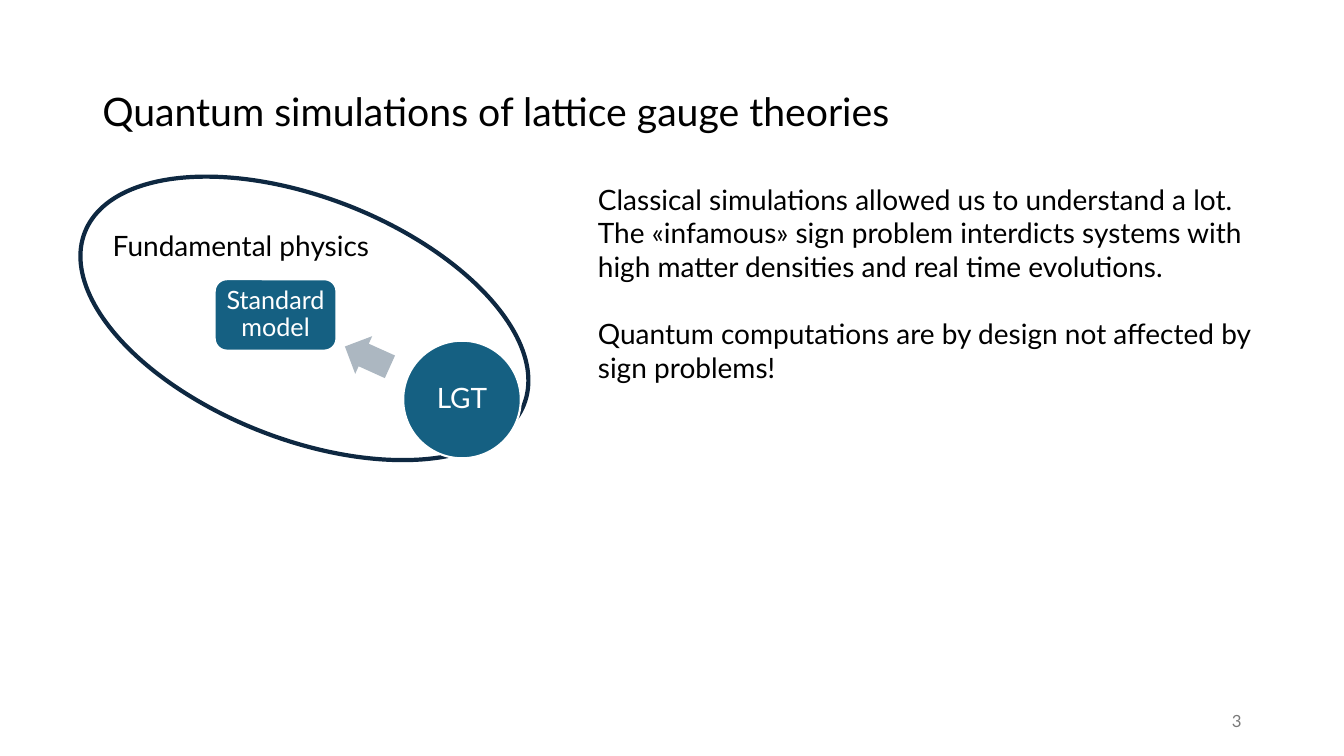
from dataclasses import dataclass

from pptx import Presentation
from pptx.dml.color import RGBColor as Rgb
from pptx.enum.shapes import MSO_SHAPE as Preset
from pptx.enum.text import MSO_ANCHOR as Anchor, PP_ALIGN as Align
from pptx.util import Inches, Pt

COLUMNS, ROWS = 160, 90
CELL = Inches(1) / 12


@dataclass(frozen=True)
class Theme:
    font: str = "Lato"
    ink: str = "000000"
    paper: str = "FFFFFF"
    outline: str = "0E2841"
    node: str = "156082"
    arrow: str = "ACB7C1"
    muted: str = "797979"
    title_size: int = 28
    body_size: int = 20
    node_size: int = 18
    number_size: int = 12
    tight: float = 0.9


@dataclass(frozen=True)
class Box:
    column: float
    row: float
    columns: float
    rows: float

    def inner(self, column, row, columns, rows):
        return Box(self.column + column, self.row + row, columns, rows)

    def emu(self):
        return [round(n * CELL) for n in (self.column, self.row, self.columns, self.rows)]


THEME = Theme()


def write(frame, lines, size, color=THEME.ink, align=Align.LEFT,
          anchor=Anchor.TOP, spacing=1.0, wrap=True):
    frame.word_wrap = wrap
    frame.vertical_anchor = anchor
    for index, (line, space_before) in enumerate(lines):
        paragraph = frame.add_paragraph() if index else frame.paragraphs[0]
        paragraph.alignment = align
        paragraph.line_spacing = spacing
        paragraph.space_before = Pt(space_before)
        run = paragraph.add_run()
        run.text = line
        run.font.name = THEME.font
        run.font.size = Pt(size)
        run.font.color.rgb = Rgb.from_string(color)


def add_text(slide, box, lines, size, **style):
    write(slide.shapes.add_textbox(*box.emu()).text_frame, lines, size, **style)


def add_figure(slide, preset, box, fill=None, line=None, line_width=0, rotation=0):
    figure = slide.shapes.add_shape(preset, *box.emu())
    figure.shadow.inherit = False
    figure.rotation = rotation
    if fill:
        figure.fill.solid()
        figure.fill.fore_color.rgb = Rgb.from_string(fill)
    else:
        figure.fill.background()
    if line:
        figure.line.color.rgb = Rgb.from_string(line)
        figure.line.width = Pt(line_width)
    else:
        figure.line.fill.background()
    return figure


def add_node(slide, preset, box, label, size):
    node = add_figure(slide, preset, box, THEME.node, THEME.paper, 1.5)
    frame = node.text_frame
    frame.margin_left = frame.margin_right = Inches(0.06)
    frame.margin_top = frame.margin_bottom = Inches(0.06)
    write(frame, [(label, 0)], size, color=THEME.paper, align=Align.CENTER,
          anchor=Anchor.MIDDLE, spacing=THEME.tight)
    return node


def add_title(slide, box):
    add_text(slide, box, [("Quantum simulations of lattice gauge theories", 0)],
             THEME.title_size, anchor=Anchor.MIDDLE, spacing=THEME.tight)


def add_argument(slide, box):
    add_text(slide, box, [
        ("Classical simulations allowed us to understand a lot.", 0),
        ("The «infamous» sign problem interdicts systems with high matter "
         "densities and real time evolutions.", 0),
        ("Quantum computations are by design not affected by sign problems!", 24),
    ], THEME.body_size)


def add_physics_diagram(slide, box):
    add_figure(slide, Preset.OVAL, box.inner(0.16, 2.5, 56.16, 28.8),
               line=THEME.outline, line_width=3, rotation=21.4)
    add_text(slide, box.inner(4.24, 5.64, 33.6, 4.56), [("Fundamental physics", 0)],
             THEME.body_size, wrap=False)
    add_node(slide, Preset.OVAL, box.inner(40, 19.56, 14, 14), "LGT", THEME.body_size)
    arrow = add_figure(slide, Preset.LEFT_ARROW, box.inner(32.8, 19, 5.88, 4.92),
                       THEME.arrow, rotation=24.3)
    arrow.adjustments[0] = 0.6
    arrow.adjustments[1] = 0.5
    standard_model = add_node(slide, Preset.ROUNDED_RECTANGLE,
                              box.inner(17.56, 12.24, 14.5, 8.5),
                              "Standard model", THEME.node_size)
    standard_model.adjustments[0] = 0.17


def add_slide_number(slide, box):
    add_text(slide, box, [("3", 0)], THEME.number_size, color=THEME.muted,
             align=Align.RIGHT, anchor=Anchor.MIDDLE)


def main():
    deck = Presentation()
    deck.slide_width = round(COLUMNS * CELL)
    deck.slide_height = round(ROWS * CELL)
    slide = deck.slides.add_slide(deck.slide_layouts[6])
    page = Box(0, 0, COLUMNS, ROWS)
    add_title(slide, page.inner(11, 4.8, 138, 17.4))
    add_argument(slide, page.inner(70, 21.12, 84, 29.5))
    add_physics_diagram(slide, page.inner(8, 21, 56, 35))
    add_slide_number(slide, page.inner(113, 83.4, 36, 4.8))
    deck.save("out.pptx")


if __name__ == "__main__":
    main()
